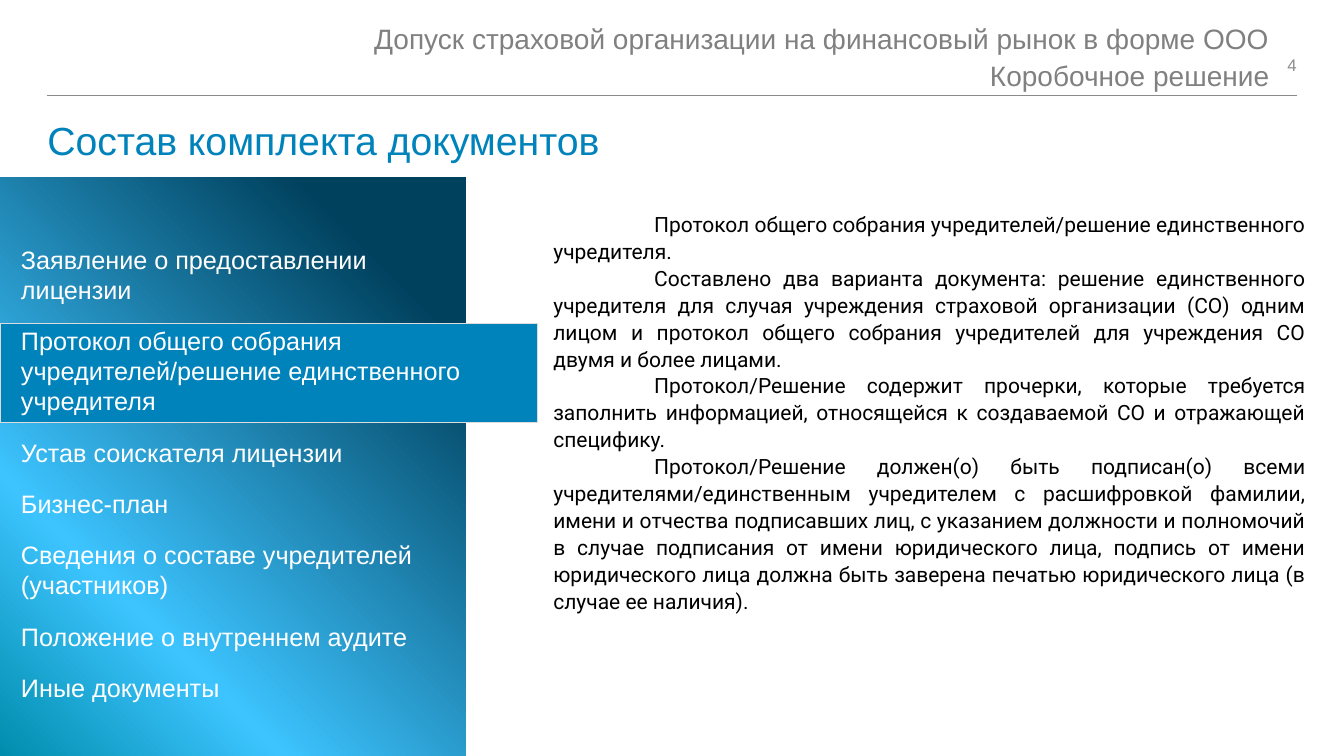
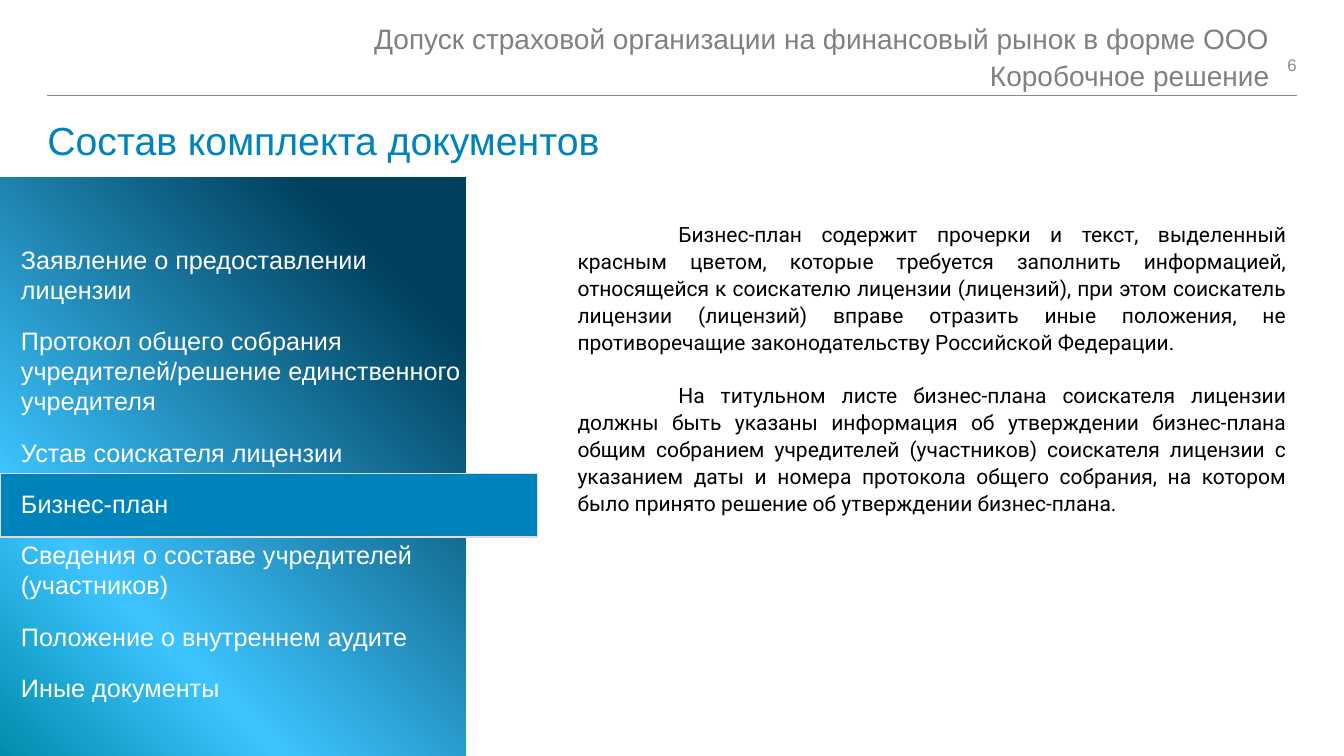
from copy import deepcopy

from pptx import Presentation
from pptx.dml.color import RGBColor
from pptx.enum.shapes import MSO_CONNECTOR as Connector, MSO_SHAPE as Shape
from pptx.enum.text import MSO_ANCHOR as Anchor, PP_ALIGN as Align
from pptx.oxml.ns import qn
from pptx.oxml.xmlchemy import OxmlElement
from pptx.util import Inches, Pt

BLUE = RGBColor(0x00, 0x82, 0xBB)
NAVY = RGBColor(0x00, 0x41, 0x5E)
SKY = RGBColor(0x3D, 0xC4, 0xFF)
TEAL = RGBColor(0x00, 0x8D, 0xAD)
RULE_GRAY = RGBColor(0x88, 0x8A, 0x8D)
NUMBER_GRAY = RGBColor(0x8C, 0x8C, 0x8C)
HEADER_GRAY = RGBColor(0x80, 0x80, 0x80)
BORDER_GRAY = RGBColor(0xDC, 0xDC, 0xDD)
WHITE = RGBColor(0xFF, 0xFF, 0xFF)
BLACK = RGBColor(0x00, 0x00, 0x00)

PANEL_STOPS = [(0.16, NAVY), (0.73, SKY), (1.0, TEAL)]
LEFT, RIGHT = 0.47, 12.86
HEADER = ["Допуск страховой организации на финансовый рынок в форме ООО", "Коробочное решение"]
TITLE = "Состав комплекта документов"
DOCUMENTS = [
    "Заявление о предоставлении лицензии",
    "Протокол общего собрания учредителей/решение единственного учредителя",
    "Устав соискателя лицензии",
    "Бизнес-план",
    "Сведения о составе учредителей (участников)",
    "Положение о внутреннем аудите",
    "Иные документы",
]

PAGES = [
    {
        "number": 4,
        "highlight": (3.21, 0.98),
        "body_box": (4.89, 2.03, 8.16, 3.88),
        "gap": 0,
        "body": [
            "Протокол общего собрания учредителей/решение единственного учредителя.",
            "Составлено два варианта документа: решение единственного учредителя для случая "
            "учреждения страховой организации (СО) одним лицом и протокол общего собрания "
            "учредителей для учреждения СО двумя и более лицами.",
            "Протокол/Решение содержит прочерки, которые требуется заполнить информацией, "
            "относящейся к создаваемой СО и отражающей специфику.",
            "Протокол/Решение должен(о) быть подписан(о) всеми учредителями/единственным "
            "учредителем с расшифровкой фамилии, имени и отчества подписавших лиц, с указанием "
            "должности и полномочий в случае подписания от имени юридического лица, подпись от "
            "имени юридического лица должна быть заверена печатью юридического лица (в случае "
            "ее наличия).",
        ],
    },
    {
        "number": 6,
        "highlight": (4.7, 0.63),
        "body_box": (5.13, 2.13, 7.73, 3.07),
        "gap": 19,
        "body": [
            "Бизнес-план содержит прочерки и текст, выделенный красным цветом, которые требуется "
            "заполнить информацией, относящейся к соискателю лицензии (лицензий), при этом "
            "соискатель лицензии (лицензий) вправе отразить иные положения, не противоречащие "
            "законодательству Российской Федерации.",
            "На титульном листе бизнес-плана соискателя лицензии должны быть указаны информация "
            "об утверждении бизнес-плана общим собранием учредителей (участников) соискателя "
            "лицензии с указанием даты и номера протокола общего собрания, на котором было "
            "принято решение об утверждении бизнес-плана.",
        ],
    },
]


def write_text(frame, lines, *, size, color, font="Arial", align=Align.LEFT, spacing=1.0,
               after=0, margin=0, first_line=0):
    for index, line in enumerate(lines):
        paragraph = frame.paragraphs[0] if index == 0 else frame.add_paragraph()
        paragraph.alignment = align
        paragraph.line_spacing = spacing
        paragraph.space_after = Pt(after)
        if first_line:
            properties = paragraph._p.get_or_add_pPr()
            properties.set("marL", str(Inches(margin)))
            properties.set("indent", str(Inches(first_line)))
        run = paragraph.add_run()
        run.text = line
        run.font.name = font
        run.font.size = Pt(size)
        run.font.color.rgb = color


class Deck:
    def __init__(self):
        self.presentation = Presentation()
        self.presentation.slide_width = Inches(13.33)
        self.presentation.slide_height = Inches(7.5)
        self.slide = None

    def new_slide(self):
        self.slide = self.presentation.slides.add_slide(self.presentation.slide_layouts[6])

    def text(self, box, lines, *, padded=False, anchor=Anchor.TOP, **style):
        frame = self.slide.shapes.add_textbox(*map(Inches, box)).text_frame
        frame.word_wrap = True
        frame.vertical_anchor = anchor
        if not padded:
            frame.margin_left = frame.margin_right = 0
            frame.margin_top = frame.margin_bottom = 0
        write_text(frame, lines, **style)

    def rectangle(self, box):
        shape = self.slide.shapes.add_shape(Shape.RECTANGLE, *map(Inches, box))
        shape.shadow.inherit = False
        return shape

    def rule(self, top):
        line = self.slide.shapes.add_connector(
            Connector.STRAIGHT, Inches(LEFT), Inches(top), Inches(RIGHT), Inches(top))
        line.line.color.rgb = RULE_GRAY
        line.line.width = Pt(0.5)
        line._element.spPr.append(OxmlElement("a:effectLst"))

    def gradient_panel(self, box):
        panel = self.rectangle(box)
        panel.rotation = 90
        panel.line.fill.background()
        panel.fill.gradient()
        panel.fill.gradient_angle = 315
        stop_list = panel._element.spPr.find(qn("a:gradFill")).find(qn("a:gsLst"))
        stop_list.append(deepcopy(stop_list[-1]))
        for stop, (position, color) in zip(panel.fill.gradient_stops, PANEL_STOPS):
            stop.position = position
            stop.color.rgb = color

    def highlight(self, top, height):
        band = self.rectangle((0, top, 5.33, height))
        band.fill.solid()
        band.fill.fore_color.rgb = BLUE
        band.line.color.rgb = BORDER_GRAY
        band.line.width = Pt(1)

    def heading(self, number):
        self.rule(0.95)
        self.text((LEFT, 1.21, RIGHT - LEFT, 0.66), [TITLE], size=28, color=BLUE, spacing=0.9)
        self.text((12.05, 0.47, 0.81, 0.35), [str(number)], anchor=Anchor.MIDDLE,
                  size=12, color=NUMBER_GRAY, align=Align.RIGHT)
        self.text((LEFT, 0.18, 12.12, 0.66), HEADER, size=20, color=HEADER_GRAY,
                  align=Align.RIGHT, spacing=1.1)

    def menu(self, highlight):
        self.gradient_panel((-0.56, 2.32, 5.74, 4.62))
        self.highlight(*highlight)
        self.text((0.11, 2.37, 4.61, 4.7), DOCUMENTS, padded=True, size=18, color=WHITE, after=15)

    def body(self, box, lines, gap):
        self.text(box, lines, padded=True, size=15, color=BLACK, font="Roboto",
                  align=Align.JUSTIFY, spacing=1.07, after=gap, margin=0.5, first_line=1)


def main():
    deck = Deck()
    for page in PAGES:
        deck.new_slide()
        deck.heading(page["number"])
        deck.menu(page["highlight"])
        deck.body(page["body_box"], page["body"], page["gap"])
    deck.presentation.save("out.pptx")


if __name__ == "__main__":
    main()
